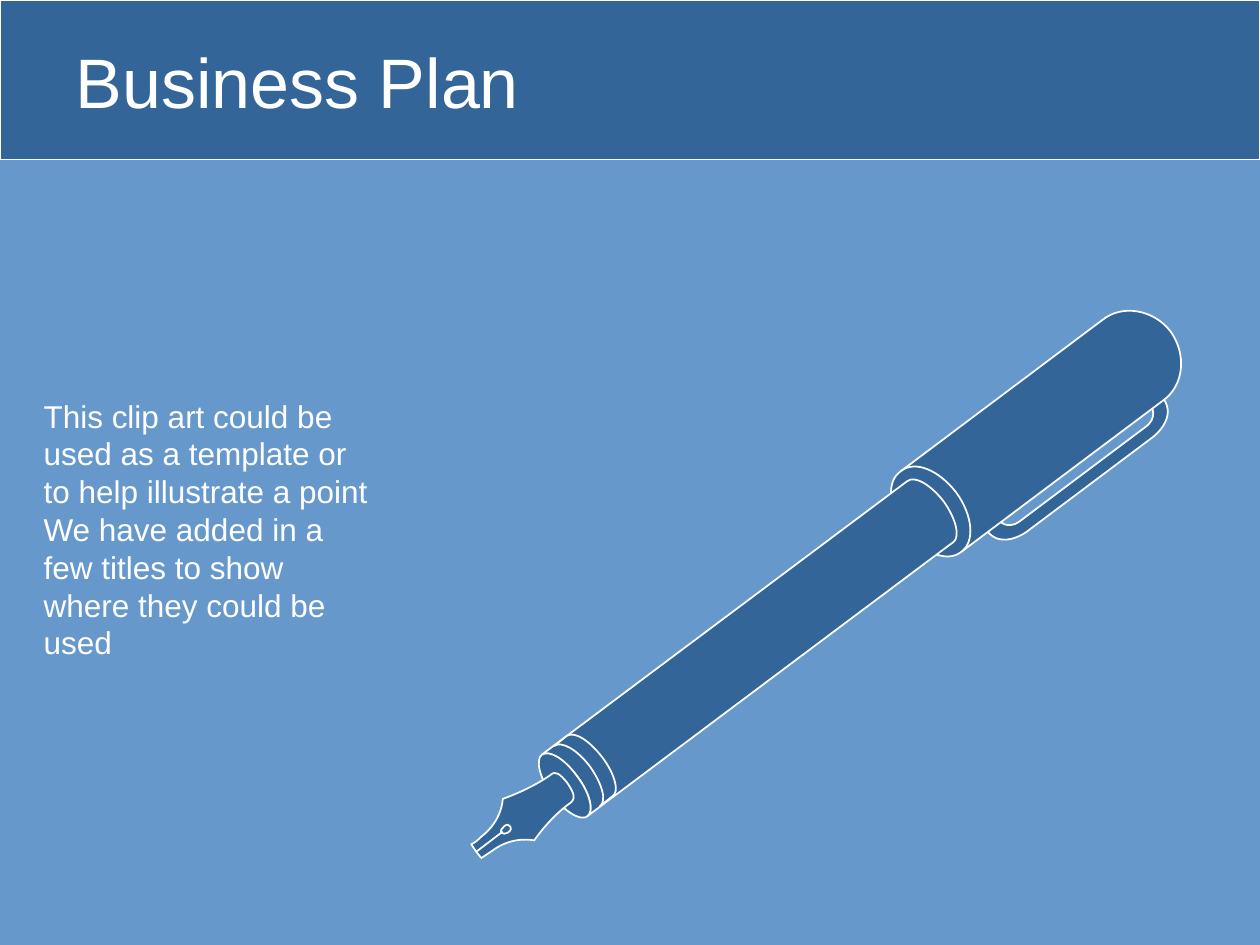
"""Build a business plan slide with a fountain pen illustration."""
from dataclasses import dataclass

from lxml import etree
from pptx import Presentation
from pptx.dml.color import RGBColor
from pptx.enum.shapes import MSO_CONNECTOR, MSO_SHAPE
from pptx.enum.text import MSO_ANCHOR, MSO_AUTO_SIZE, PP_ALIGN
from pptx.oxml.ns import qn
from pptx.shapes.base import BaseShape
from pptx.shapes.group import GroupShape
from pptx.text.text import TextFrame
from pptx.util import Cm, Pt

RECTANGLE = MSO_SHAPE.RECTANGLE
STRAIGHT = MSO_CONNECTOR.STRAIGHT
MIDDLE = MSO_ANCHOR.MIDDLE
LEFT = PP_ALIGN.LEFT
NO_AUTOFIT = MSO_AUTO_SIZE.NONE
GROW_TO_FIT = MSO_AUTO_SIZE.SHAPE_TO_FIT_TEXT

COLORS = {"background": "6698CC", "ink": "336599", "white": "FFFFFF"}
FONT = "Arial"
GRID = Cm(2.54) / 100
CURVE_STEPS = 16
TITLE_ONLY = 5

Point = tuple[float, float]


@dataclass(frozen=True)
class PenPart:
    """A closed outline whose segments are line ends (2 values) or Bezier curves (6 values)."""

    start: Point
    segments: tuple[tuple[float, ...], ...]

    def samples(self) -> list[Point]:
        """Return points along the outline, which give its extent."""
        outline = [self.start]
        for segment in self.segments:
            if len(segment) == 2:
                outline.append(segment)
            else:
                outline.extend(curve_points(outline[-1], segment))
        return outline[1:]


CLIP = PenPart((923, 316), (
    (914, 323), (914, 323, 919, 332, 909, 339), (809, 414),
    (799, 421, 793, 413, 793, 413), (783, 421),
    (795, 437, 815, 422, 815, 422), (915, 347),
    (915, 347, 935, 332, 923, 316)))
CAP = PenPart((929, 263), (
    (916, 246, 891, 241, 875, 254), (715, 374), (763, 438), (923, 318),
    (940, 306, 942, 281, 929, 263)))
CAP_RIM = PenPart((763, 438), (
    (752, 447, 732, 439, 719, 421), (705, 403, 703, 382, 715, 374),
    (726, 365, 745, 373, 759, 391), (772, 409, 774, 430, 763, 438)))
BARREL = PenPart((749, 398), (
    (739, 385, 726, 377, 720, 382), (430, 599),
    (436, 595, 448, 603, 458, 616), (468, 629, 472, 644, 466, 648),
    (757, 430), (762, 426, 759, 412, 749, 398)))
RING = PenPart((478, 601), (
    (468, 588, 456, 580, 450, 584), (440, 592),
    (446, 588, 458, 595, 468, 608), (478, 622, 482, 636, 476, 640),
    (486, 632), (492, 629, 488, 614, 478, 601)))
BARREL_END = PenPart((466, 648), (
    (461, 652, 448, 644, 438, 631), (428, 617, 425, 603, 430, 599),
    (436, 595, 448, 602, 458, 616), (468, 629, 472, 644, 466, 648)))
NIB = PenPart((453, 637), (
    (458, 633, 454, 627, 450, 621), (445, 615, 441, 611, 437, 615),
    (420, 627, 399, 634, 399, 634), (399, 634, 399, 651, 382, 664),
    (380, 666, 377, 669, 374, 670), (378, 676), (382, 681),
    (385, 679, 388, 677, 391, 675), (407, 663, 424, 667, 424, 667),
    (424, 667, 436, 649, 453, 637)))
BREATHER_HOLE = PenPart((403, 661), (
    (401, 662, 399, 662, 398, 661), (397, 660, 398, 657, 400, 656),
    (402, 654, 404, 654, 405, 656), (406, 657, 406, 659, 403, 661)))
PEN = (CLIP, CAP, CAP_RIM, BARREL, RING, BARREL_END, NIB, BREATHER_HOLE)
NIB_SLIT = ((399, 660), (378, 676))


def curve_points(start: Point, curve: tuple[float, ...]) -> list[Point]:
    """Return evenly spaced points along a cubic Bezier curve."""
    x1, y1, x2, y2, x3, y3 = curve

    def blend(a: float, b: float, c: float, d: float, t: float) -> float:
        u = 1 - t
        return u**3 * a + 3 * u * u * t * b + 3 * u * t * t * c + t**3 * d

    steps = [step / CURVE_STEPS for step in range(1, CURVE_STEPS + 1)]
    return [(blend(start[0], x1, x2, x3, t), blend(start[1], y1, y2, y3, t))
            for t in steps]


def on_slide(point: Point) -> tuple[int, int]:
    """Turn a grid point into slide lengths."""
    return round(point[0] * GRID), round(point[1] * GRID)


def paint(shape: BaseShape, line_width: float) -> None:
    """Give a shape the ink fill and a white outline."""
    shape.shadow.inherit = False
    shape.fill.solid()
    shape.fill.fore_color.rgb = RGBColor.from_string(COLORS["ink"])
    shape.line.color.rgb = RGBColor.from_string(COLORS["white"])
    shape.line.width = Pt(line_width)


def trace(shape: BaseShape, part: PenPart) -> None:
    """Rewrite the outline of a shape with true lines and curves."""
    outline = next(shape.element.iter(qn("a:path")))
    left, top = shape.left, shape.top
    for step in list(outline):
        outline.remove(step)
    for segment in (part.start, *part.segments):
        tag = "a:cubicBezTo" if len(segment) == 6 else "a:lnTo"
        step = etree.SubElement(outline, qn(tag if len(outline) else "a:moveTo"))
        for point in zip(segment[::2], segment[1::2]):
            x, y = on_slide(point)
            etree.SubElement(step, qn("a:pt"), x=str(x - left), y=str(y - top))
    etree.SubElement(outline, qn("a:close"))


def draw_part(pen: GroupShape, part: PenPart) -> None:
    """Draw one closed part of the pen."""
    builder = pen.shapes.build_freeform(*on_slide(part.start))
    builder.add_line_segments([on_slide(point) for point in part.samples()], close=True)
    shape = builder.convert_to_shape()
    trace(shape, part)
    paint(shape, 1)


def draw_slit(pen: GroupShape) -> None:
    """Draw the slit from the breather hole to the tip of the nib."""
    hole, tip = NIB_SLIT
    slit = pen.shapes.add_connector(STRAIGHT, *on_slide(hole), *on_slide(tip))
    slit.line.color.rgb = RGBColor.from_string(COLORS["white"])
    slit.line.width = Pt(1)
    etree.SubElement(slit.element.spPr, qn("a:effectLst"))


def write(frame: TextFrame, text: str, size: int) -> None:
    """Fill a text frame with left-aligned white text."""
    frame.text = text
    frame.word_wrap = True
    for paragraph in frame.paragraphs:
        paragraph.alignment = LEFT
        for run in paragraph.runs:
            run.font.name = FONT
            run.font.size = Pt(size)
            run.font.color.rgb = RGBColor.from_string(COLORS["white"])


def main() -> None:
    """Build and save the slide."""
    deck = Presentation()
    deck.slide_width, deck.slide_height = Cm(25.4), Cm(19.05)
    slide = deck.slides.add_slide(deck.slide_layouts[TITLE_ONLY])
    slide.background.fill.solid()
    slide.background.fill.fore_color.rgb = RGBColor.from_string(COLORS["background"])

    banner = slide.shapes.add_shape(RECTANGLE, 0, 0, deck.slide_width, Cm(3.22))
    paint(banner, 0.75)

    pen = slide.shapes.add_group_shape()
    for part in PEN:
        draw_part(pen, part)
    draw_slit(pen)

    title = slide.shapes.title
    title.left, title.top, title.width, title.height = Cm(1.27), Cm(0.52), Cm(22.53), Cm(2.21)
    write(title.text_frame, "Business Plan", 40)
    title.text_frame.vertical_anchor = MIDDLE
    title.text_frame.auto_size = NO_AUTOFIT
    pen.element.addnext(title.element)

    description = slide.shapes.add_textbox(Cm(0.63), Cm(7.87), Cm(7.15), Cm(5.59))
    write(description.text_frame,
          "This clip art could be used as a template or to help illustrate a point\n"
          "We have added in a few titles to show where they could be used", 18)
    description.text_frame.auto_size = GROW_TO_FIT

    deck.save("out.pptx")


if __name__ == "__main__":
    main()
